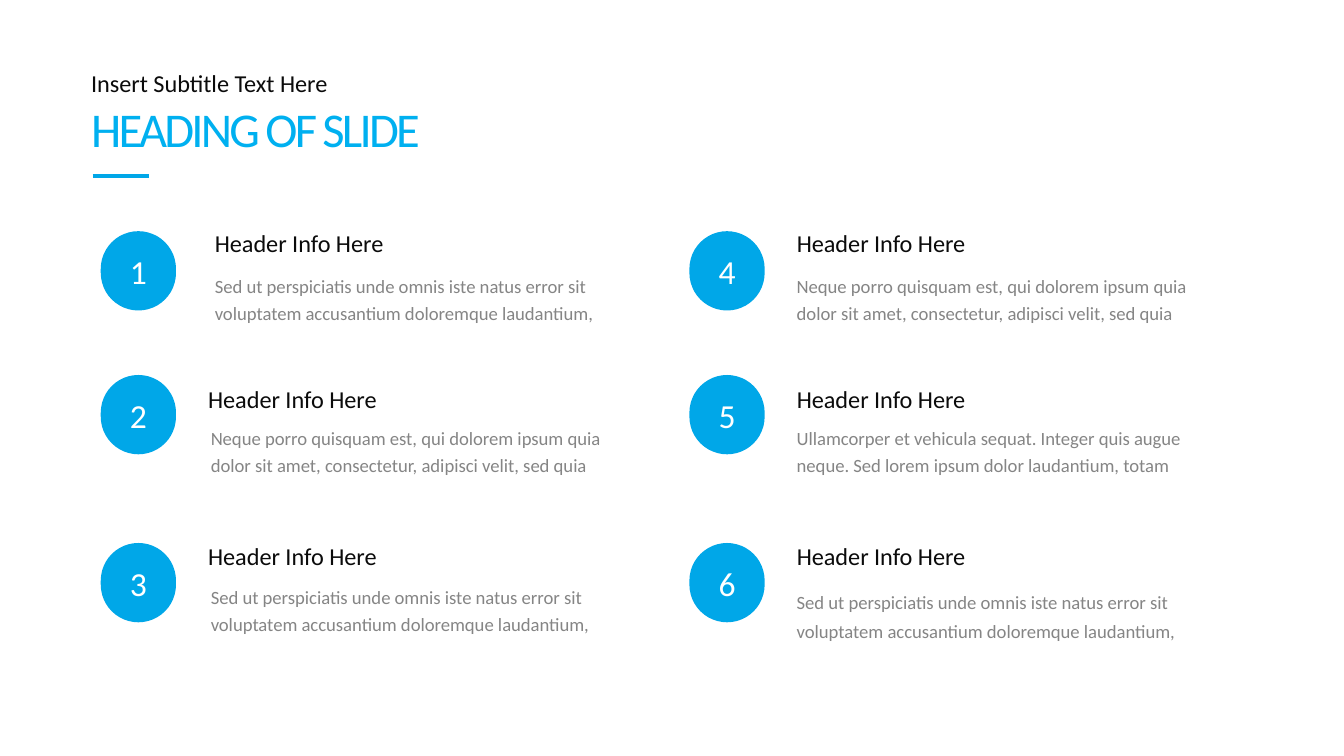
import pptx
import pptx.util
import pptx.dml.color
import pptx.enum.shapes
import pptx.enum.text
import pptx.oxml.ns
import lxml.etree

Inches = pptx.util.Inches
Pt = pptx.util.Pt
ANCHOR = pptx.enum.text.MSO_ANCHOR
ALIGN = pptx.enum.text.PP_ALIGN
COLORS = {"blue": "00A7E8", "heading": "00B0F0", "dark": "0B0B0B",
          "gray": "858585", "white": "FFFFFF"}


def rgb(name):
    return pptx.dml.color.RGBColor.from_string(COLORS[name])


def add_text(sp, text, size=10, color="dark", anchor=ANCHOR.TOP, align=ALIGN.LEFT,
             wrap=True, before=0, line=1.0, spacing=None):
    tf = sp.text_frame
    tf.word_wrap = wrap
    tf.vertical_anchor = anchor
    p = tf.paragraphs[0]
    p.alignment = align
    p.space_before = Pt(before)
    p.line_spacing = line
    r = p.add_run()
    r.text = text
    r.font.name = "Calibri"
    r.font.size = Pt(size)
    r.font.color.rgb = rgb(color)
    if spacing is not None:
        r.font._element.set("spc", str(spacing))


prs = pptx.Presentation()
prs.slide_width = Inches(10)
prs.slide_height = Inches(10 * 9 / 16)
s = prs.slides.add_slide(prs.slide_layouts[6])

rule = s.shapes.add_connector(pptx.enum.shapes.MSO_CONNECTOR.STRAIGHT,
                              Inches(0.69), Inches(1.31), Inches(1.11), Inches(1.31))
rule.line.color.rgb = rgb("blue")
rule.line.width = Pt(2)
lxml.etree.SubElement(rule._element.spPr, pptx.oxml.ns.qn("a:effectLst"))

sp = s.shapes.add_textbox(Inches(0.58), Inches(0.46), Inches(5.5), Inches(0.35))
add_text(sp, "Insert Subtitle Text Here", size=13, before=2.6)
sp = s.shapes.add_textbox(Inches(0.58), Inches(0.48), Inches(8.33), Inches(0.94))
add_text(sp, "HEADING OF SLIDE", size=26, color="heading", anchor=ANCHOR.MIDDLE, spacing=-150)

sed = "Sed ut perspiciatis unde omnis iste natus error sit voluptatem accusantium doloremque laudantium,"
neque = "Neque porro quisquam est, qui dolorem ipsum quia dolor sit amet, consectetur, adipisci velit, sed quia"
ullamcorper = "Ullamcorper et vehicula sequat. Integer quis augue neque. Sed lorem ipsum dolor laudantium, totam"

badge_lefts = [0.75, 5.13]
badge_tops = [1.72, 2.79, 4.04]
header_tops = [1.65, 2.81, 3.98]
body_tops = [1.95, 3.06, 4.23]
items = [
    (1.5, 1.5, 0.52, 1.2, sed),
    (1.45, 1.47, 0.57, 1.2, neque),
    (1.45, 1.47, 0.6, 1.2, sed),
    (5.83, 5.83, 0.52, 1.2, neque),
    (5.83, 5.83, 0.57, 1.2, ullamcorper),
    (5.83, 5.83, 0.67, 1.3, sed),
]

for i, (header_left, body_left, body_height, line, body) in enumerate(items):
    col, row = divmod(i, 3)

    sp = s.shapes.add_shape(pptx.enum.shapes.MSO_SHAPE.ROUNDED_RECTANGLE,
                            Inches(badge_lefts[col]), Inches(badge_tops[row]),
                            Inches(0.56), Inches(0.59))
    sp.adjustments[0] = 0.5
    sp.shadow.inherit = False
    sp.fill.solid()
    sp.fill.fore_color.rgb = rgb("blue")
    sp.line.fill.background()
    add_text(sp, str(i + 1), size=18, color="white", anchor=ANCHOR.MIDDLE,
             align=ALIGN.CENTER, wrap=False, before=3.6)

    sp = s.shapes.add_textbox(Inches(header_left), Inches(header_tops[row]),
                              Inches(1.88), Inches(0.32))
    add_text(sp, "Header Info Here", size=13)

    sp = s.shapes.add_textbox(Inches(body_left), Inches(body_tops[row]),
                              Inches(3.33), Inches(body_height))
    add_text(sp, body, color="gray", anchor=ANCHOR.MIDDLE, line=line)

prs.save("out.pptx")
